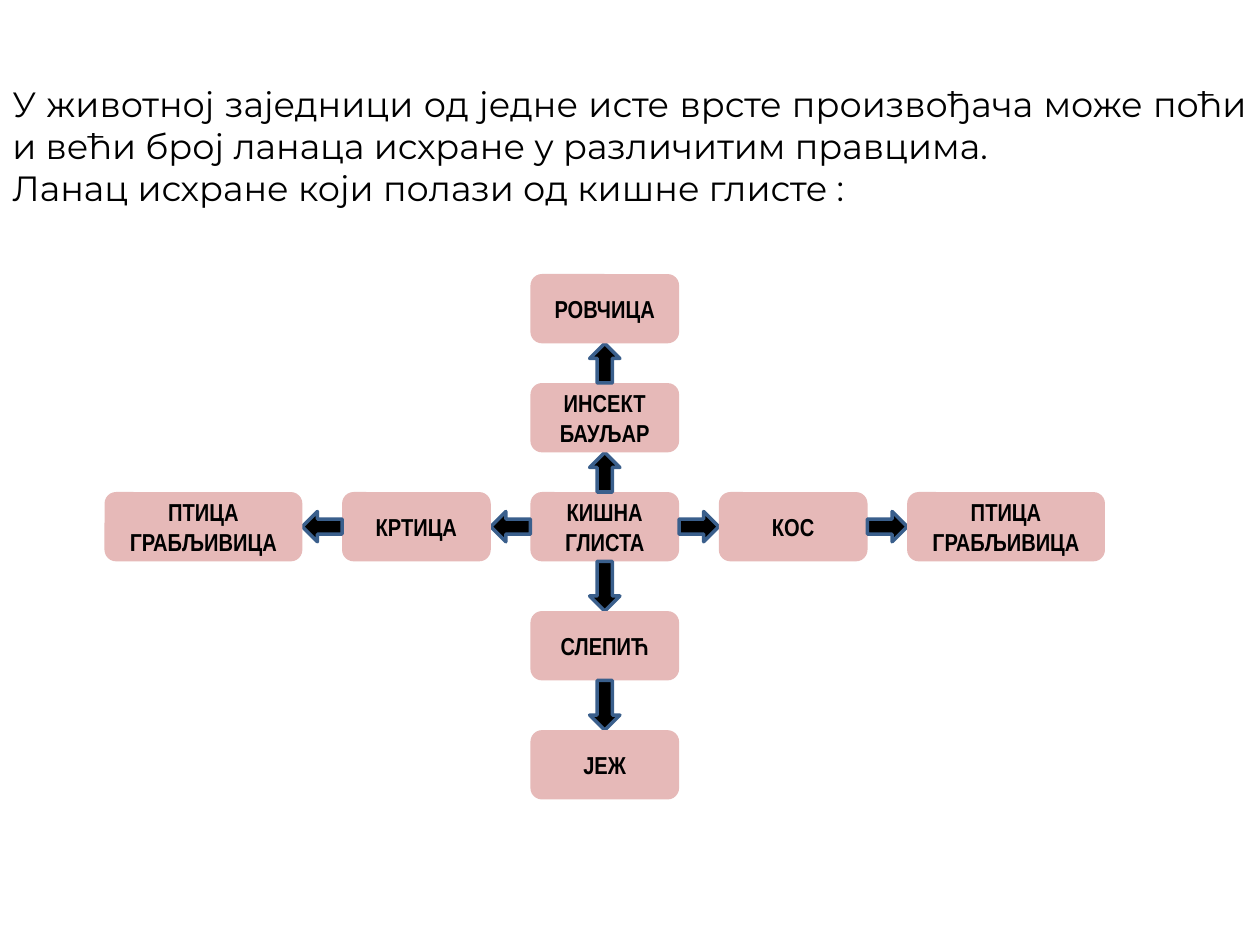
from pptx import Presentation
from pptx.dml.color import RGBColor
from pptx.enum.shapes import MSO_SHAPE
from pptx.enum.text import MSO_ANCHOR, PP_ALIGN
from pptx.util import Inches, Pt

BOX = MSO_SHAPE.ROUNDED_RECTANGLE
UP, DOWN = MSO_SHAPE.UP_ARROW, MSO_SHAPE.DOWN_ARROW
LEFT, RIGHT = MSO_SHAPE.LEFT_ARROW, MSO_SHAPE.RIGHT_ARROW
MIDDLE = MSO_ANCHOR.MIDDLE
CENTER, JUSTIFY = PP_ALIGN.CENTER, PP_ALIGN.JUSTIFY

PINK = RGBColor(0xE6, 0xB9, 0xB8)
BLACK = RGBColor(0, 0, 0)
BLUE = RGBColor(0x3A, 0x5F, 0x8C)

deck = Presentation()
deck.slide_width, deck.slide_height = Inches(10), Inches(7.5)
slide = deck.slides.add_slide(deck.slide_layouts[6])

# Grid in inches: centre of the cross, box and arrow sizes
MID_X, MID_Y = 4.8, 4.18
NARROW, WIDE, HIGH = 1.18, 1.57, 0.55
THICK = 0.24


def add_form(kind, x, y, wide, high, fill):
    """Add a filled shape centred on x, y."""
    form = slide.shapes.add_shape(kind, Inches(x - wide / 2), Inches(y - high / 2),
                                  Inches(wide), Inches(high))
    form.shadow.inherit = False
    form.fill.solid()
    form.fill.fore_color.rgb = fill
    return form


def add_box(name, x, y, wide):
    box = add_form(BOX, x, y, wide, HIGH, PINK)
    box.line.fill.background()
    frame = box.text_frame
    frame.text = name
    frame.word_wrap = True
    frame.vertical_anchor = MIDDLE
    para = frame.paragraphs[0]
    para.alignment = CENTER
    font = para.runs[0].font
    font.name, font.size, font.bold = "Arial Narrow", Pt(14), True
    font.color.rgb = BLACK


# Introduction
intro = slide.shapes.add_textbox(0, Inches(0.6), deck.slide_width, Inches(1.11))
frame = intro.text_frame
frame.word_wrap = True
frame.vertical_anchor = MIDDLE
frame.text = (
    "У животној заједници од једне исте врсте произвођача може поћи "
    "и већи број ланаца исхране у различитим правцима.\n"
    "Ланац исхране који полази од кишне глисте :"
)
for para in frame.paragraphs:
    para.alignment = JUSTIFY
    font = para.runs[0].font
    font.name, font.size = "Montserrat", Pt(20)
    font.color.rgb = BLACK

# Food chains: direction, arrow kind, arrow length, boxes from the centre out
arms = [
    (0, -1, UP, 0.315, [("ИНСЕКТ БАУЉАР", NARROW), ("РОВЧИЦА", NARROW)]),
    (0, 1, DOWN, 0.395, [("СЛЕПИЋ", NARROW), ("ЈЕЖ", NARROW)]),
    (-1, 0, LEFT, 0.315, [("КРТИЦА", NARROW), ("ПТИЦА ГРАБЉИВИЦА", WIDE)]),
    (1, 0, RIGHT, 0.315, [("КОС", NARROW), ("ПТИЦА ГРАБЉИВИЦА", WIDE)]),
]
add_box("КИШНА ГЛИСТА", MID_X, MID_Y, NARROW)
for dx, dy, kind, gap, names in arms:
    edge = NARROW / 2 if dx else HIGH / 2
    for name, wide in names:
        # Arrow fills the gap, then the next box follows
        far = edge + gap / 2
        size = (gap, THICK) if dx else (THICK, gap)
        arrow = add_form(kind, MID_X + dx * far, MID_Y + dy * far, *size, BLACK)
        arrow.line.color.rgb = BLUE
        arrow.line.width = Pt(2)
        span = wide if dx else HIGH
        far = edge + gap + span / 2
        add_box(name, MID_X + dx * far, MID_Y + dy * far, wide)
        edge += gap + span

deck.save("out.pptx")
